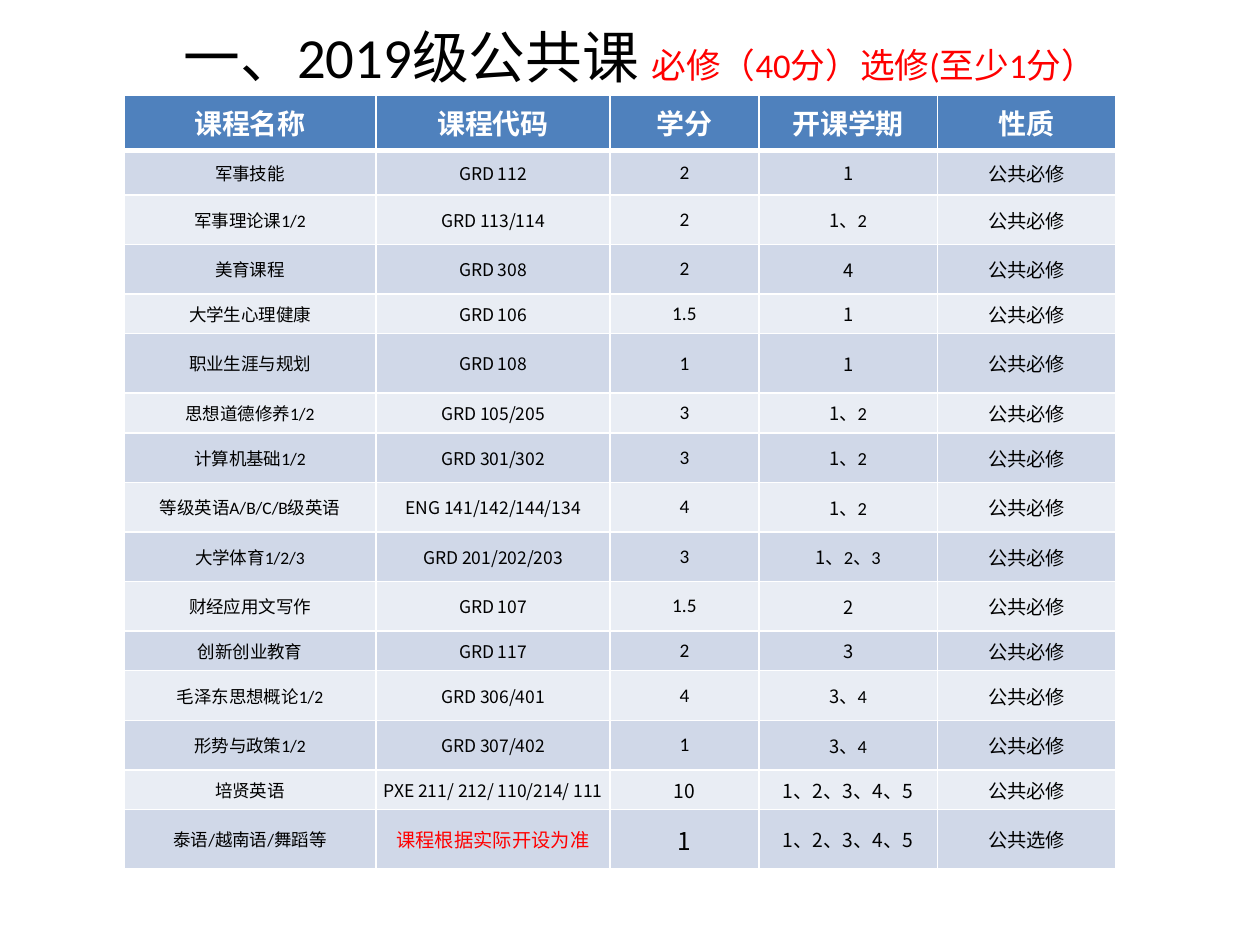
from pptx import Presentation
from pptx import util as u
from pptx.dml import color
from pptx.enum import text
from pptx.oxml import ns
from lxml import etree

LATIN = "Calibri"
CJK = "Noto Sans CJK SC"
BLACK, WHITE, RED = "000000", "FFFFFF", "FF0000"
HEADER_FILL = "4F81BD"
BAND_FILLS = ("D0D8E8", "E9EDF4")

COL_WIDTHS = (5.08, 4.72, 3, 3.6, 3.6)
ROW_HEIGHTS = (1.1, 0.9, 1, 1, 0.8, 1.2, 0.8, 1, 1, 1, 1, 0.8, 1, 1, 0.8, 1.2)
HEADERS = ("课程名称", "课程代码", "学分", "开课学期", "性质")
REQUIRED, ELECTIVE = "公共必修", "公共选修"
COURSES = (
    ("军事技能", "GRD 112", "2", "1"),
    ("军事理论课1/2", "GRD 113/114", "2", "1、2"),
    ("美育课程", "GRD 308", "2", "4"),
    ("大学生心理健康", "GRD 106", "1.5", "1"),
    ("职业生涯与规划", "GRD 108", "1", "1"),
    ("思想道德修养1/2", "GRD 105/205", "3", "1、2"),
    ("计算机基础1/2", "GRD 301/302", "3", "1、2"),
    ("等级英语A/B/C/B级英语", "ENG 141/142/144/134", "4", "1、2"),
    ("大学体育1/2/3", "GRD 201/202/203", "3", "1、2、3"),
    ("财经应用文写作", "GRD 107", "1.5", "2"),
    ("创新创业教育", "GRD 117", "2", "3"),
    ("毛泽东思想概论1/2", "GRD 306/401", "4", "3、4"),
    ("形势与政策1/2", "GRD 307/402", "1", "3、4"),
)
ALL_TERMS = "1、2、3、4、5"


def rgb(value):
    return color.RGBColor.from_string(value)


def add_run(p, words, size, font=LATIN, fill=BLACK, bold=False):
    r = p.add_run()
    r.text = words
    r.font.size = u.Pt(size)
    r.font.bold = bold
    r.font.color.rgb = rgb(fill)
    r.font.name = font
    etree.SubElement(r.font._element, ns.qn("a:ea"), typeface=CJK)


def set_borders(cell, bottom=1, top=1):
    tc_pr = cell._tc.get_or_add_tcPr()
    for side, width in (("L", 1), ("R", 1), ("T", top), ("B", bottom)):
        ln = etree.SubElement(tc_pr, ns.qn(f"a:ln{side}"), w=str(u.Pt(width)))
        fill = etree.SubElement(ln, ns.qn("a:solidFill"))
        etree.SubElement(fill, ns.qn("a:srgbClr"), val=WHITE)


def fill_cell(cell, runs, fill, **borders):
    set_borders(cell, **borders)
    cell.fill.solid()
    cell.fill.fore_color.rgb = rgb(fill)
    p = cell.text_frame.paragraphs[0]
    p.alignment = text.PP_ALIGN.CENTER
    for run in runs:
        add_run(p, *run)


def course_cells(name, code, credit, terms):
    term_runs = [(terms[0], 10.5, CJK)]
    if terms[1:]:
        term_runs.append((terms[1:], 10.5))
    return ([(name, 10)], [(code, 10, CJK)], [(credit, 11)], term_runs, [(REQUIRED, 11, CJK)])


def body_rows():
    rows = [course_cells(*course) for course in COURSES]
    terms = [(ALL_TERMS, 11, CJK)]
    rows.append(([("培贤英语", 10)], [("PXE 211/ 212/ 110/214/ 111", 10, CJK)],
                 [("10", 11, CJK)], terms, [(REQUIRED, 11, CJK)]))
    rows.append(([("泰语/越南语/舞蹈等", 10)], [("课程根据实际开设为准", 11, CJK, RED)],
                 [("1", 14, CJK)], terms, [(ELECTIVE, 11, CJK)]))
    return rows


def add_title(s, left, top, width, height):
    sp = s.shapes.add_textbox(u.Cm(left), u.Cm(top), u.Cm(width), u.Cm(height))
    tf = sp.text_frame
    tf.word_wrap = True
    tf.vertical_anchor = text.MSO_ANCHOR.MIDDLE
    p = tf.paragraphs[0]
    p.alignment = text.PP_ALIGN.CENTER
    add_run(p, "一、2019级公共课 ", 32.4)
    add_run(p, "必修（40分）选修(至少1分）", 19.8, fill=RED)


def add_course_table(s, left, top, width, height):
    table = s.shapes.add_table(len(ROW_HEIGHTS), len(COL_WIDTHS), u.Cm(left), u.Cm(top),
                               u.Cm(width), u.Cm(height)).table
    for column, share in zip(table.columns, COL_WIDTHS):
        column.width = u.Cm(width * share / sum(COL_WIDTHS))
    for row, share in zip(table.rows, ROW_HEIGHTS):
        row.height = u.Cm(height * share / sum(ROW_HEIGHTS))

    for j, header in enumerate(HEADERS):
        fill_cell(table.cell(0, j), [(header, 16, LATIN, WHITE, True)], HEADER_FILL, bottom=3)
    for i, row in enumerate(body_rows()):
        for j, runs in enumerate(row):
            cell = table.cell(i + 1, j)
            cell.margin_left = cell.margin_right = u.Cm(0.03)
            cell.margin_top = cell.margin_bottom = 0
            cell.vertical_anchor = text.MSO_ANCHOR.MIDDLE
            fill_cell(cell, runs, BAND_FILLS[i % 2], top=1 if i else 3)


def main():
    prs = Presentation()
    prs.slide_width, prs.slide_height = u.Cm(25.4), u.Cm(19.05)
    s = prs.slides.add_slide(prs.slide_layouts[6])
    add_title(s, 1.7, 0.33, 22.4, 1.6)
    add_course_table(s, 2.5, 1.93, 20, 15.6)
    prs.save("out.pptx")


if __name__ == "__main__":
    main()
